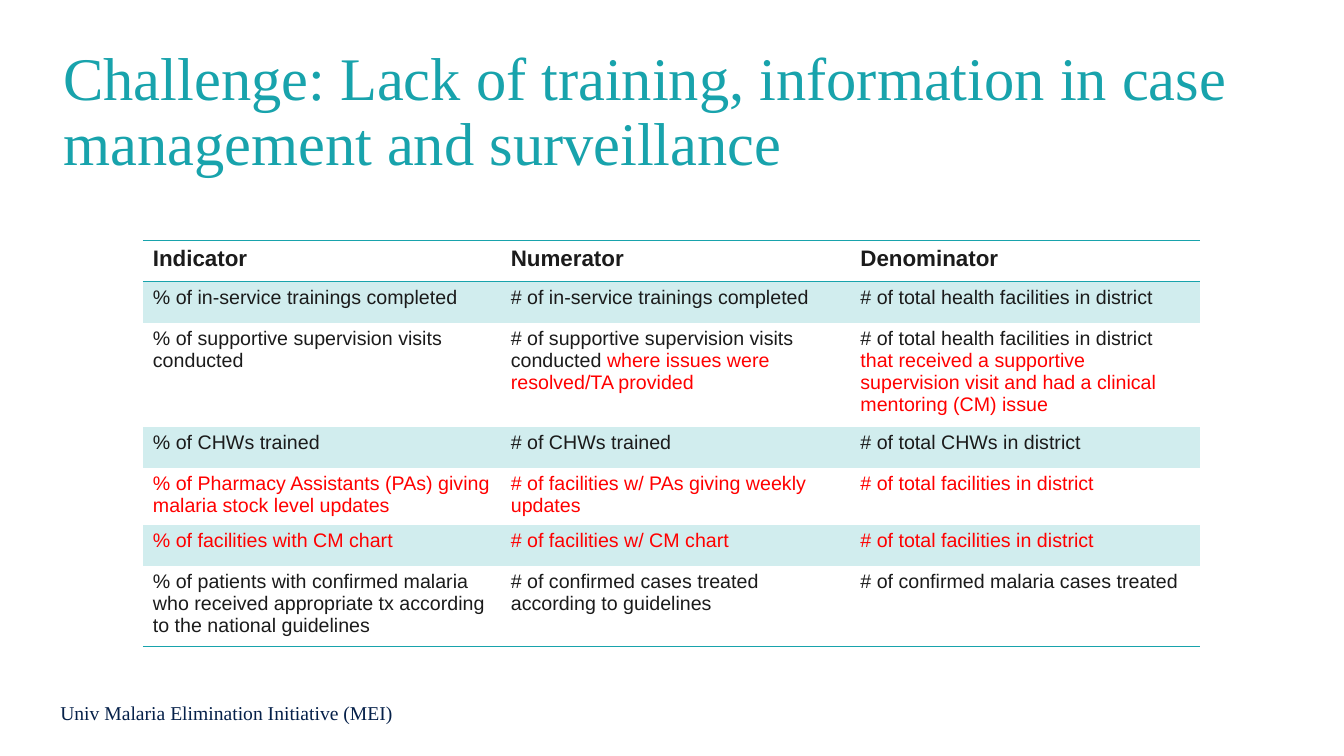
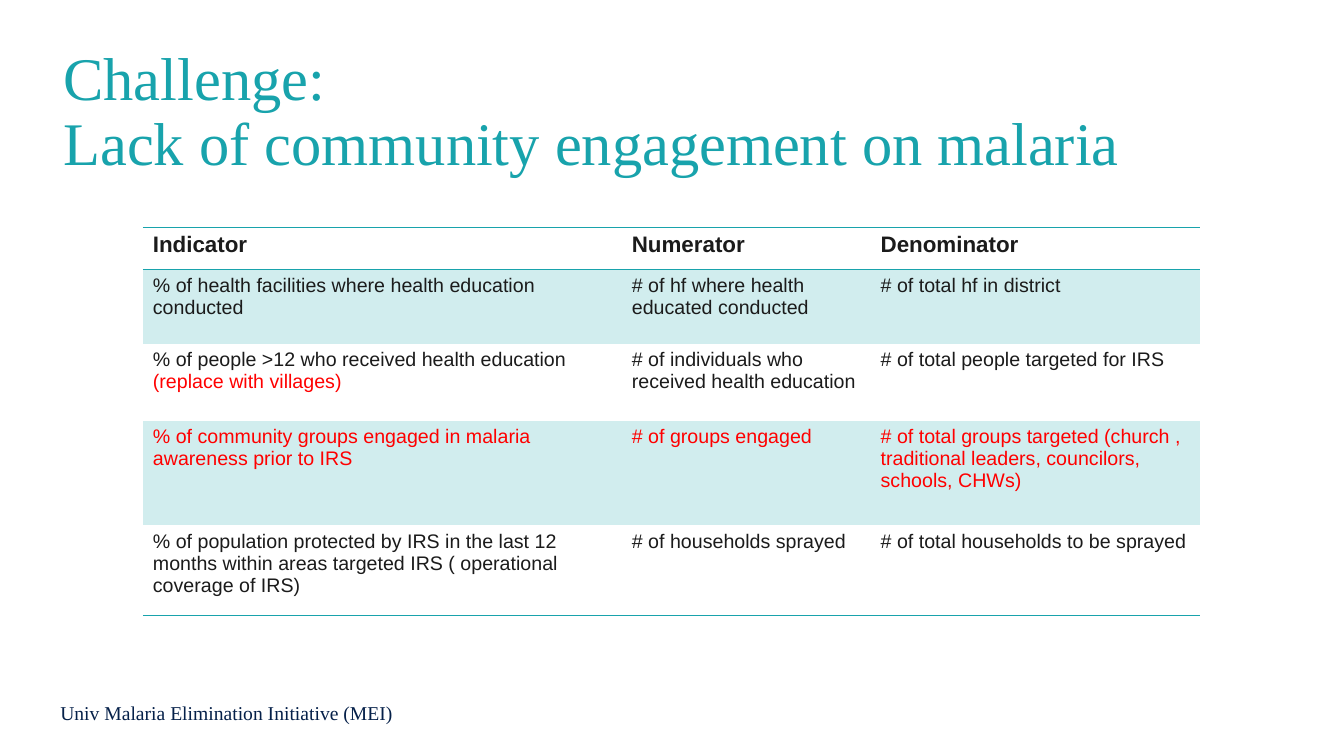
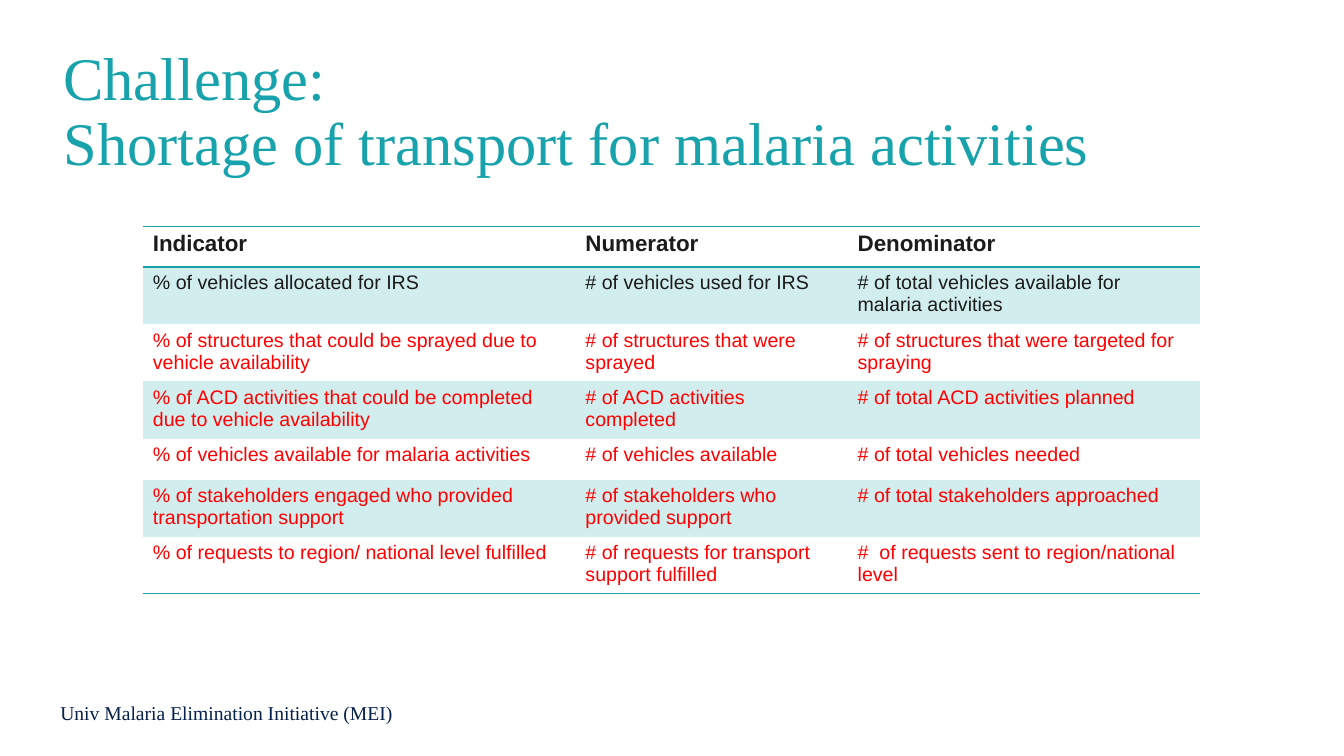
from pptx import Presentation
from pptx.dml.color import RGBColor as RGB
from pptx.enum.text import MSO_ANCHOR as Anchor
from pptx.oxml import parse_xml
from pptx.oxml.ns import nsdecls
from pptx.util import Cm, Pt

HUE = {"teal": "18A3AC", "band": "D1EDEE", "ink": "1B1B1B", "red": "FF0000", "navy": "052049"}
SERIF, SANS = "Times New Roman", "Arial"
FOOT = "Univ Malaria Elimination Initiative (MEI)"
PLAIN = "{2D5ABB26-0587-4C30-8999-92F81FD0307C}"  # table style without grid


# A line feed starts a paragraph; each bar switches between the given colour and red
def write(frame, text, size=14, font=SANS, color="ink", bold=False, space=1.0):
    frame.word_wrap = True
    for n, line in enumerate(text.split("\n")):
        para = frame.add_paragraph() if n else frame.paragraphs[0]
        para.line_spacing = space
        for i, part in enumerate(line.split("|")):
            if part:
                run = para.add_run()
                run.text = part
                run.font.size, run.font.name, run.font.bold = Pt(size), font, bold
                run.font.color.rgb = RGB.from_string(HUE["red" if i % 2 else color])


def rule(cell, sides):
    for i, side in enumerate(sides):
        cell._tc.get_or_add_tcPr().insert(i, parse_xml(
            f'<a:ln{side} {nsdecls("a")} w="12700"><a:solidFill>'
            f'<a:srgbClr val="{HUE["teal"]}"/></a:solidFill></a:ln{side}>'))


# Title, table top, column widths, row heights, body rows
HEAD = ("Indicator", "Numerator", "Denominator")
DECK = [
    ("Challenge: Lack of training, information in case management and surveillance",
     6.07, (9.02, 8.81, 8.81), [1.03] * 7, [
         ("% of in-service trainings completed",
          "# of in-service trainings completed",
          "# of total health facilities in district"),
         ("% of supportive supervision visits conducted",
          "# of supportive supervision visits conducted |where issues were resolved/TA provided",
          "# of total health facilities in district |that received a supportive "
          "supervision visit and had a clinical mentoring (CM) issue"),
         ("% of CHWs trained", "# of CHWs trained", "# of total CHWs in district"),
         ("|% of Pharmacy Assistants (PAs) giving malaria stock level updates",
          "|# of facilities w/ PAs giving weekly updates",
          "|# of total facilities in district"),
         ("|% of facilities with CM chart",
          "|# of facilities w/ CM chart",
          "|# of total facilities in district"),
         ("% of patients with confirmed malaria who received appropriate tx "
          "according to the national guidelines",
          "# of confirmed cases treated according to guidelines",
          "# of confirmed malaria cases treated"),
     ]),
    ("Challenge:\nLack of community engagement on malaria",
     5.74, (12.07, 6.27, 8.3), [1.06, 1.86, 1.94, 2.64, 2.28], [
         ("% of health facilities where health education conducted",
          "# of hf where health educated conducted",
          "# of total hf in district"),
         ("% of people >12 who received health education\n|(replace with villages)",
          "# of individuals who received health education",
          "# of total people targeted for IRS"),
         ("|% of community groups engaged in malaria awareness prior to IRS",
          "|# of groups engaged",
          "|# of total groups targeted (church , traditional leaders, councilors, schools, CHWs)"),
         ("% of population protected by IRS in the last 12 months within areas "
          "targeted IRS ( operational coverage of IRS)",
          "# of households sprayed",
          "# of total households to be sprayed"),
     ]),
    ("Challenge:\nShortage of transport for malaria activities",
     5.7, (10.9, 6.86, 8.88), [1.03] * 7, [
         ("% of vehicles allocated for IRS",
          "# of vehicles used for IRS",
          "# of total vehicles available for malaria activities"),
         ("|% of structures that could be sprayed due to vehicle availability",
          "|# of structures that were sprayed",
          "|# of structures that were targeted for spraying"),
         ("|% of ACD activities that could be completed due to vehicle availability",
          "|# of ACD activities completed",
          "|# of total ACD activities planned"),
         ("|% of vehicles available for malaria activities",
          "|# of vehicles available",
          "|# of total vehicles needed"),
         ("|% of stakeholders engaged who provided transportation support",
          "|# of stakeholders who provided support",
          "|# of total stakeholders approached"),
         ("|% of requests to region/ national level fulfilled",
          "|# of requests for transport support fulfilled",
          "|#  of requests sent to region/national level"),
     ]),
]

deck = Presentation()
deck.slide_width, deck.slide_height = Cm(33.87), Cm(19.05)

for title, top, cols, highs, body in DECK:
    slide = deck.slides.add_slide(deck.slide_layouts[6])

    # Footer and title
    foot = slide.shapes.add_textbox(Cm(1.27), Cm(17.53), Cm(13.49), Cm(0.86))
    write(foot.text_frame, FOOT, font=SERIF, color="navy")
    head = slide.shapes.add_textbox(Cm(1.35), Cm(1.02), Cm(31.62), Cm(3.68))
    head.text_frame.vertical_anchor = Anchor.MIDDLE
    write(head.text_frame, title, size=43.2, font=SERIF, color="teal", space=0.9)

    # Indicator table
    rows = [HEAD] + body
    grid = slide.shapes.add_table(len(rows), len(cols), Cm(3.6), Cm(top),
                                  Cm(sum(cols)), Cm(sum(highs))).table
    grid._tbl.tblPr[0].text = PLAIN
    grid.horz_banding = False
    for col, wide in zip(grid.columns, cols):
        col.width = Cm(wide)
    for r, texts in enumerate(rows):
        grid.rows[r].height = Cm(highs[r])
        for c, text in enumerate(texts):
            cell = grid.cell(r, c)
            write(cell.text_frame, text, size=14 if r else 16, bold=r == 0)
            if r % 2:
                cell.fill.solid()
                cell.fill.fore_color.rgb = RGB.from_string(HUE["band"])
            else:
                cell.fill.background()
            if r == 0:
                rule(cell, "TB")
            elif r == len(body):
                rule(cell, "B")

deck.save("out.pptx")
